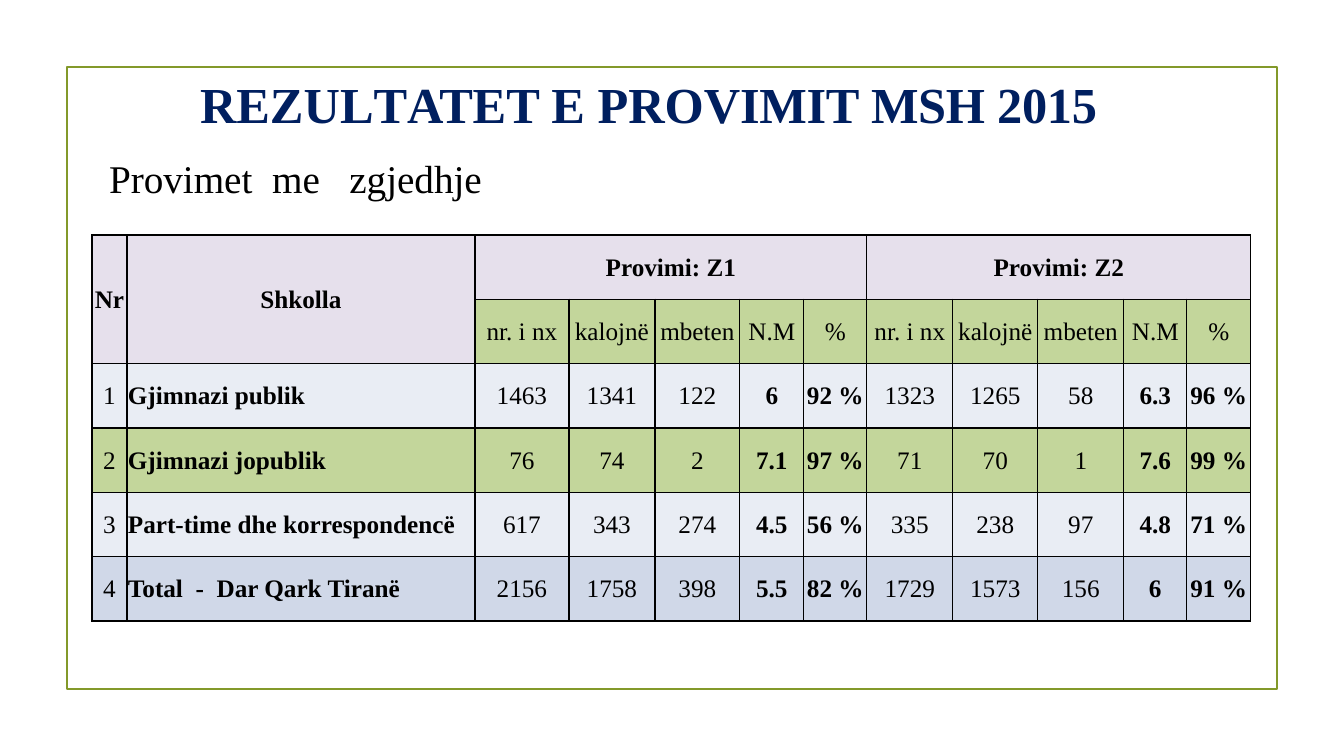
from dataclasses import dataclass

from lxml import etree
from pptx import Presentation
from pptx.dml.color import RGBColor
from pptx.enum.shapes import MSO_SHAPE
from pptx.enum.text import MSO_ANCHOR, PP_ALIGN
from pptx.oxml.ns import qn
from pptx.slide import Slide
from pptx.table import Table, _Cell
from pptx.text.text import TextFrame
from pptx.util import Pt

PX = 12192000 / 1344
FONT = "Times New Roman"
RECT = MSO_SHAPE.RECTANGLE
MIDDLE = MSO_ANCHOR.MIDDLE
LEFT = PP_ALIGN.LEFT
CENTER = PP_ALIGN.CENTER

BLACK = RGBColor(0x00, 0x00, 0x00)
NAVY = RGBColor(0x00, 0x1F, 0x5F)
OLIVE = RGBColor(0x83, 0x99, 0x2A)
LILAC = RGBColor(0xE6, 0xE0, 0xEC)
GREEN = RGBColor(0xC3, 0xD6, 0x9B)
PALE = RGBColor(0xE9, 0xED, 0xF4)
BLUE = RGBColor(0xD0, 0xD8, 0xE8)


@dataclass(frozen=True)
class Span:
    text: str
    gap: float = 0


@dataclass(frozen=True)
class Style:
    size: int
    color: RGBColor = BLACK
    bold: bool = False
    align: PP_ALIGN = LEFT


@dataclass(frozen=True)
class Label:
    box: tuple[int, int, int, int]
    inset: tuple[int, int]
    spans: list[Span]
    style: Style


@dataclass(frozen=True)
class School:
    name: list[Span]
    marks: list[str]
    fill: RGBColor


LABELS = [
    Label(
        (126, 67, 1109, 92),
        (74, 6),
        [
            Span("REZU"), Span("L", -0.7), Span("T", -3), Span("ATE", -0.3),
            Span("T ", -0.2), Span("E "), Span("P", -0.3), Span("R", -1.1),
            Span("O", -1.4), Span("VIMIT ", -0.2), Span("MSH ", -0.3),
            Span("2015", -0.2),
        ],
        Style(36, NAVY, True),
    ),
    Label(
        (109, 151, 1126, 47),
        (0, 3),
        [Span("Provimet"), Span(" ", 7), Span("me"), Span(" ", 14), Span("zgjedhje")],
        Style(28),
    ),
]

COLS = [35, 348, 94, 86, 85, 64, 63, 86, 85, 86, 63, 64]
EXAMS = ["Provimi: Z1", "Provimi: Z2"]
HEADS = ["nr. i nx", "kalojnë", "mbeten", "N.M", "%"]
STRONG = {"N.M", "%"}
SCHOOLS = [
    School(
        [Span("Gjimnazi publik")],
        ["1463", "1341", "122", "6", "92 %", "1323", "1265", "58", "6.3", "96 %"],
        PALE,
    ),
    School(
        [Span("Gjimnazi jopublik")],
        ["76", "74", "2", "7.1", "97 %", "71", "70", "1", "7.6", "99 %"],
        GREEN,
    ),
    School(
        [Span("Part-time dhe korrespondencë")],
        ["617", "343", "274", "4.5", "56 %", "335", "238", "97", "4.8", "71 %"],
        PALE,
    ),
    School(
        [Span("Total"), Span(" ", 4.5), Span("-"), Span(" ", 4.5), Span("Dar Qark Tiranë")],
        ["2156", "1758", "398", "5.5", "82 %", "1729", "1573", "156", "6", "91 %"],
        BLUE,
    ),
]
PLAIN = Style(18, align=CENTER)
BOLD = Style(18, bold=True, align=CENTER)
NAME = Style(18, bold=True)


def px(count: int) -> int:
    return round(count * PX)


def write(frame: TextFrame, spans: list[Span], style: Style) -> None:
    line = frame.paragraphs[0]
    line.alignment = style.align
    for span in spans:
        run = line.add_run()
        run.text = span.text
        if span.gap:
            run._r.get_or_add_rPr().set("spc", str(round(span.gap * 100)))
    font = line.font
    font.name = FONT
    font.size = Pt(style.size)
    font.bold = style.bold
    font.color.rgb = style.color


def add_frame(slide: Slide) -> None:
    frame = slide.shapes.add_shape(RECT, px(67), px(67), px(1210), px(622))
    frame.shadow.inherit = False
    frame.fill.background()
    frame.line.color.rgb = OLIVE
    frame.line.width = Pt(1.25)


def add_label(slide: Slide, label: Label) -> None:
    frame = slide.shapes.add_textbox(*map(px, label.box)).text_frame
    frame.word_wrap = True
    frame.margin_left, frame.margin_top = map(px, label.inset)
    frame.margin_right = frame.margin_bottom = 0
    write(frame, label.spans, label.style)


def dress(cell: _Cell, fill: RGBColor) -> None:
    props = cell._tc.get_or_add_tcPr()
    for side in ("a:lnL", "a:lnR", "a:lnT", "a:lnB"):
        line = etree.SubElement(props, qn(side), w=str(Pt(1)))
        paint = etree.SubElement(line, qn("a:solidFill"))
        etree.SubElement(paint, qn("a:srgbClr"), val=str(BLACK))
    cell.fill.solid()
    cell.fill.fore_color.rgb = fill
    cell.vertical_anchor = MIDDLE
    cell.margin_left = cell.margin_right = cell.margin_top = px(1)
    cell.margin_bottom = 0


def fill_heads(table: Table) -> None:
    for col, text in enumerate(["Nr", "Shkolla"]):
        cell = table.cell(0, col)
        cell.merge(table.cell(1, col))
        write(cell.text_frame, [Span(text)], BOLD)
    for part, text in enumerate(EXAMS):
        first = 2 + part * len(HEADS)
        cell = table.cell(0, first)
        cell.merge(table.cell(0, first + len(HEADS) - 1))
        write(cell.text_frame, [Span(text)], BOLD)
        for col, head in enumerate(HEADS, first):
            write(table.cell(1, col).text_frame, [Span(head)], PLAIN)


def fill_school(table: Table, rank: int, school: School) -> None:
    row = rank + 1
    write(table.cell(row, 0).text_frame, [Span(str(rank))], PLAIN)
    write(table.cell(row, 1).text_frame, school.name, NAME)
    for col, (head, mark) in enumerate(zip(HEADS * len(EXAMS), school.marks), 2):
        style = BOLD if head in STRONG else PLAIN
        write(table.cell(row, col).text_frame, [Span(mark)], style)


def add_marks(slide: Slide) -> None:
    fills = [LILAC, GREEN] + [school.fill for school in SCHOOLS]
    table = slide.shapes.add_table(
        len(fills), len(COLS), px(92), px(235), px(sum(COLS)), px(386)
    ).table
    table.first_row = table.horz_banding = False
    for col, width in zip(table.columns, COLS):
        col.width = px(width)
    for row, fill in enumerate(fills):
        for col in range(len(COLS)):
            dress(table.cell(row, col), LILAC if row == 1 and col < 2 else fill)
    fill_heads(table)
    for rank, school in enumerate(SCHOOLS, 1):
        fill_school(table, rank, school)


def main() -> None:
    deck = Presentation()
    deck.slide_width, deck.slide_height = px(1344), px(756)
    slide = deck.slides.add_slide(deck.slide_layouts[6])
    add_frame(slide)
    for label in LABELS:
        add_label(slide, label)
    add_marks(slide)
    deck.save("out.pptx")


if __name__ == "__main__":
    main()
